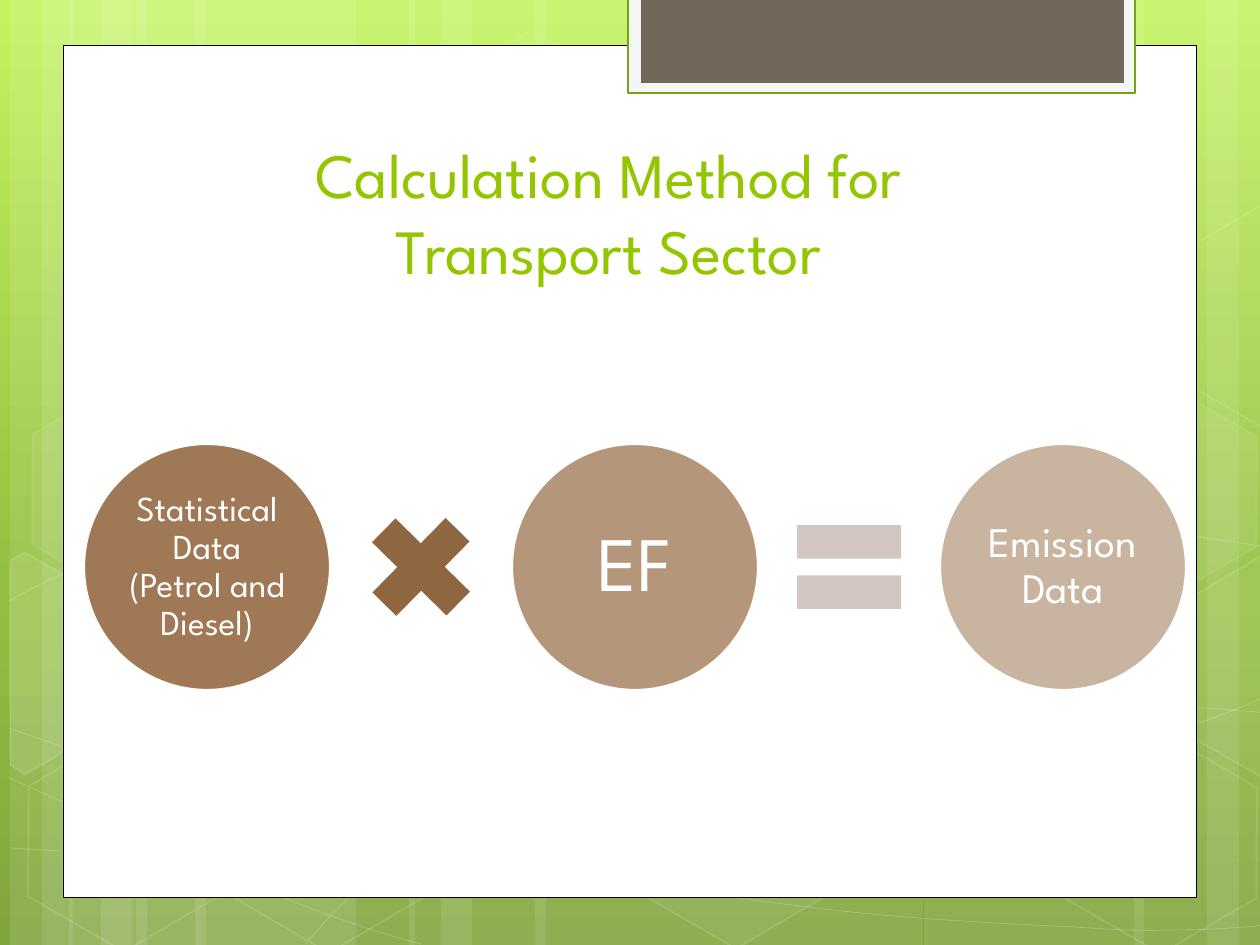
from copy import deepcopy
from dataclasses import dataclass
from math import cos, radians, sin

from lxml import etree
from pptx import Presentation
from pptx.dml.color import RGBColor
from pptx.enum import shapes, text
from pptx.oxml.ns import qn
from pptx import util as u

PX = u.Inches(1) / 126
WIDE, HIGH = 1260, 945
TILT = 30
KIND = shapes.MSO_SHAPE


@dataclass(frozen=True)
class Theme:
    font: str = "League Spartan"
    white: str = "FFFFFF"
    black: str = "000000"
    lime: str = "94C600"
    edge: str = "74A510"
    pale: str = "F5F5F5"
    stone: str = "71685A"
    brown: str = "956B43"
    times: str = "8E6640"
    equal: str = "D3C8C1"
    sky: tuple = ((0, "C3F35F"), (0.62, "93BF3F"), (1, "81A53E"))
    title: int = 36
    small: int = 20
    mid: int = 24
    big: int = 44


T = Theme()

STRIPES = [(136, 220), (10, 63), (42, 105), (195, 220), (69, 63), (101, 105),
           (924, 220), (1207, 63), (1134, 105), (535, 388), (409, 63), (441, 105)]

# Each wave is a start point followed by triples of Bezier points.
WAVES = [
    [(9, 848), (77, 852), (145, 856), (239, 854), (333, 853), (451, 850), (577, 838),
     (703, 825), (882, 801), (998, 777), (1113, 753), (1231, 716), (1269, 694)],
    [(9, 601), (45, 581), (82, 562), (152, 543), (224, 524), (326, 496), (437, 488),
     (549, 479), (685, 478), (824, 488), (963, 498), (1193, 537), (1269, 547)],
    [(8, 777), (160, 847), (311, 916), (421, 944)],
    [(9, 728), (48, 742), (88, 756), (161, 776), (234, 795), (344, 827), (450, 848),
     (554, 869), (687, 892), (791, 905), (896, 919), (1008, 924), (1075, 927),
     (1140, 932), (1158, 930), (1191, 930), (1223, 929), (1246, 927), (1269, 925)],
    [(305, 944), (328, 919), (350, 893), (381, 871), (411, 848), (454, 823), (489, 805),
     (524, 788), (546, 780), (592, 767), (638, 755), (722, 737), (766, 728),
     (811, 720), (818, 720), (857, 717), (896, 713), (958, 709), (1000, 708),
     (1045, 707), (1116, 708), (1116, 708), (1144, 708), (1173, 708), (1201, 708),
     (1223, 709), (1245, 711), (1268, 713)],
]

# Left, top, fill opacity, line opacity
HEXES = [(421, 45, 4, 8), (626, 742, 6, 12), (14, 745, 0, 12), (18, 393, 7, 8),
         (219, 746, 0, 12), (949, 571, 10, 12), (1051, 747, 0, 12), (1051, 396, 7, 8)]

# Fill opacity, centre, corners as they stand after tilting
SHARDS = [
    (10, (45, 674), [(10, 561), (24, 552), (121, 607), (120, 718), (25, 774), (10, 765)]),
    (4, (1241, 655), [(1167, 611), (1261, 556), (1271, 562), (1271, 772),
                      (1262, 777), (1167, 722)]),
    (0, (1241, 304), [(1167, 261), (1261, 205), (1272, 212), (1271, 422),
                      (1262, 427), (1167, 372)]),
]


def px(n):
    return u.Emu(round(n * PX))


def tint(fill, color, alpha):
    """Solid color with an opacity in percent; none at zero."""
    if not alpha:
        fill.background()
        return
    fill.solid()
    fill.fore_color.rgb = RGBColor.from_string(color)
    if alpha < 100:
        node = fill._xPr.find(".//" + qn("a:srgbClr"))
        etree.SubElement(node, qn("a:alpha"), val=str(alpha * 1000))


def style(shape, color=T.white, alpha=100, line=None, width=1, clear=100):
    shape.shadow.inherit = False
    tint(shape.fill, color, alpha)
    tint(shape.line.fill, line, clear if line else 0)
    if line:
        shape.line.width = u.Pt(width)
    return shape


def put(slide, kind, box, **look):
    return style(slide.shapes.add_shape(kind, *map(px, box)), **look)


def trace(slide, dots, close, **look):
    pen = slide.shapes.build_freeform(*dots[0], scale=PX)
    pen.add_line_segments(dots[1:], close=close)
    return style(pen.convert_to_shape(), **look)


def bend(shape):
    """Turn each three line segments into one Bezier curve."""
    lines = list(shape._element.iter(qn("a:lnTo")))
    for first, second, third in zip(lines[::3], lines[1::3], lines[2::3]):
        curve = etree.Element(qn("a:cubicBezTo"))
        first.addprevious(curve)
        for line in (first, second, third):
            curve.append(line[0])
            line.getparent().remove(line)


def level(dot, mid):
    """Where a tilted corner stands before tilting about mid."""
    x, y = dot[0] - mid[0], dot[1] - mid[1]
    c, s = cos(radians(TILT)), sin(radians(TILT))
    return round(mid[0] + x * c + y * s), round(mid[1] - x * s + y * c)


def write(slide, box, words, size, color, anchor, inset):
    frame = slide.shapes.add_textbox(*map(px, box)).text_frame
    frame.word_wrap = True
    frame.vertical_anchor = anchor
    frame.margin_left = frame.margin_right = px(inset[0])
    frame.margin_top = frame.margin_bottom = px(inset[1])
    para = frame.paragraphs[0]
    para.text = words
    para.alignment = text.PP_ALIGN.CENTER
    para.font.name, para.font.size = T.font, u.Pt(size)
    para.font.color.rgb = RGBColor.from_string(color)
    return para


def sky(slide):
    fill = slide.background.fill
    fill.gradient()
    fill.gradient_angle = 270
    stops = slide._element.find(".//" + qn("a:gsLst"))
    stops.append(deepcopy(stops[-1]))
    for stop, (place, color) in zip(fill.gradient_stops, T.sky):
        stop.position = place
        stop.color.rgb = RGBColor.from_string(color)


def decor(slide):
    for x, wide in STRIPES:
        put(slide, KIND.RECTANGLE, (x, 0, wide, HIGH), alpha=10)
    for knots in WAVES:
        bend(trace(slide, knots, False, alpha=0, line=T.white, width=0.5, clear=20))
    for x, y, alpha, clear in HEXES:
        hexa = put(slide, KIND.HEXAGON, (x, y, 220, 192), alpha=alpha,
                   line=T.white, clear=clear)
        hexa.adjustments[0] = 0.285
        hexa.rotation = TILT
    for alpha, mid, dots in SHARDS:
        flat = [level(dot, mid) for dot in dots]
        trace(slide, flat, True, alpha=alpha, line=T.white, clear=12).rotation = TILT


def card(slide, box):
    x, y, wide, high = box
    put(slide, KIND.RECTANGLE, box, line=T.black, width=0.5)
    put(slide, KIND.RECTANGLE, (x + 565, y - 48, 507, 96), color=T.pale,
        line=T.edge, width=1.25)
    put(slide, KIND.RECTANGLE, (x + 578, y - 48, 483, 86), color=T.stone)


def title(slide, box):
    write(slide, box, "Calculation Method for Transport Sector", T.title, T.lime,
          text.MSO_ANCHOR.BOTTOM, (13, 6))


def sums(slide, box):
    """Row of discs with a sign centred in each gap."""
    x, y, wide, disc = box
    step = (wide - disc) // 2
    sign, gap, pad = 142, 20, 36
    side = disc - 2 * pad
    discs = [("Statistical Data (Petrol and Diesel)", T.small, 90, 4),
             ("EF", T.big, 70, 8), ("Emission Data", T.mid, 50, 4)]
    signs = [(KIND.MATH_PLUS, T.times, 44.5), (KIND.MATH_EQUAL, T.equal, 0)]
    for i, (words, size, alpha, inset) in enumerate(discs):
        left = x + i * step
        put(slide, KIND.OVAL, (left, y, disc, disc), color=T.brown,
            alpha=alpha, line=T.white, width=1.25)
        para = write(slide, (left + pad, y + pad, side, side), words, size, T.white,
                     text.MSO_ANCHOR.MIDDLE, (inset, inset))
        para.line_spacing = 0.9
        for kind, color, turn in signs[i:i + 1]:
            spot = (left + disc + gap, y + (disc - sign) // 2, sign, sign)
            put(slide, kind, spot, color=color).rotation = turn


def main():
    deck = Presentation()
    deck.slide_width, deck.slide_height = px(WIDE), px(HIGH)
    slide = deck.slides.add_slide(deck.slide_layouts[6])
    sky(slide)
    decor(slide)
    card(slide, (63, 45, 1134, 853))
    title(slide, (173, 135, 871, 158))
    sums(slide, (84, 444, 1102, 246))
    deck.save("out.pptx")


if __name__ == "__main__":
    main()
